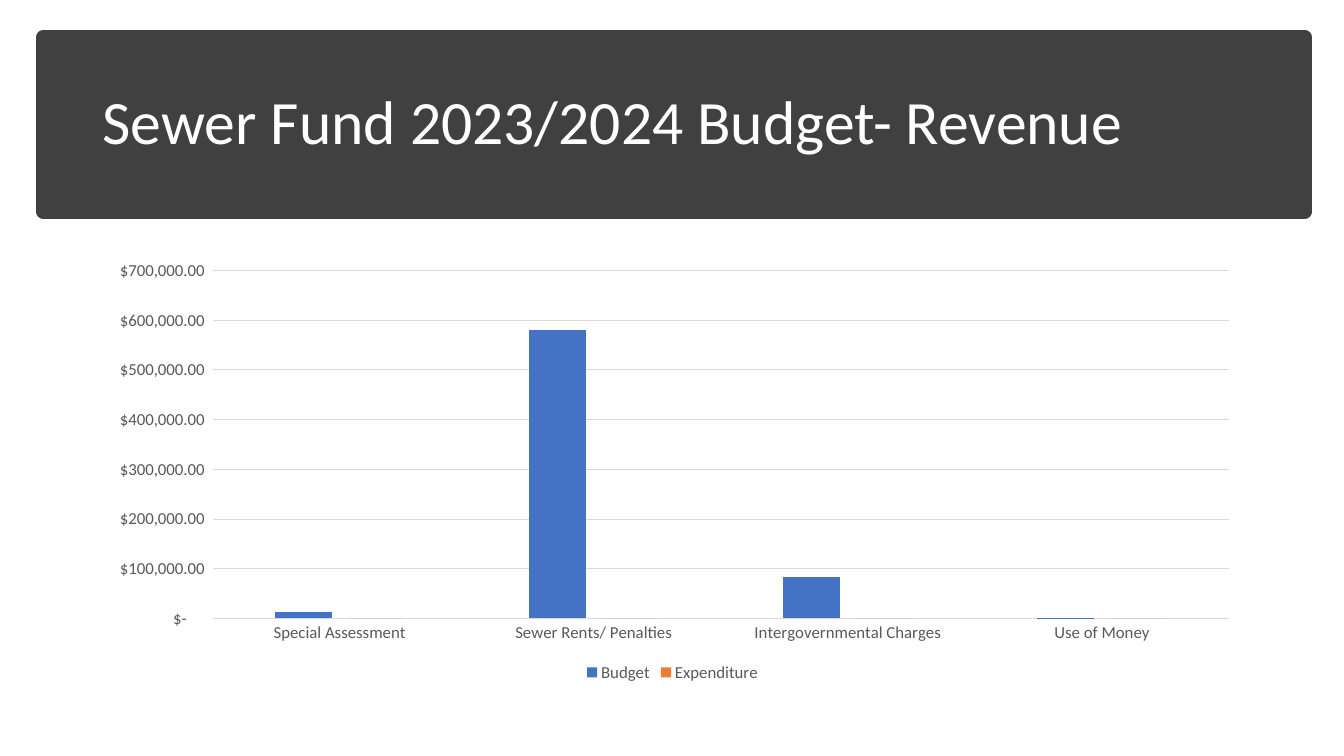
from dataclasses import dataclass

from pptx import Presentation
from pptx.chart.data import CategoryChartData
from pptx.dml.color import RGBColor
from pptx.enum.chart import XL_CHART_TYPE, XL_LEGEND_POSITION, XL_TICK_MARK
from pptx.enum.shapes import MSO_SHAPE
from pptx.enum.text import MSO_ANCHOR
from pptx.util import Pt

COLUMNS = XL_CHART_TYPE.COLUMN_CLUSTERED
LEGEND_BOTTOM = XL_LEGEND_POSITION.BOTTOM
NO_TICK = XL_TICK_MARK.NONE
RECTANGLE = MSO_SHAPE.RECTANGLE
MIDDLE = MSO_ANCHOR.MIDDLE

EMU_PER_PX = 9144  # 100 px to the inch
SLIDE_SIZE = (1333, 750)
BANNER_BOX = (43, 37, 1251, 173)
CHART_BOX = (92, 250, 1150, 431)

TITLE = "Sewer Fund 2023/2024 Budget- Revenue"
SOURCES = ("Special Assessment", "Sewer Rents/ Penalties",
           "Intergovernmental Charges", "Use of Money")
REVENUE = {
    "Budget": (12000, 580000, 84000, 500),
    "Expenditure": (0, 0, 0, 0),
}
DOLLARS = '_($* #,##0.00_);_($* (#,##0.00);_($* "-"??_);_(@_)'


@dataclass(frozen=True)
class Theme:
    font: str = "Calibri"
    banner: str = "404040"
    title: str = "FFFFFF"
    label: str = "595959"
    rule: str = "D9D9D9"
    series: tuple = ("4472C4", "ED7D31")
    title_size: int = 44
    label_size: int = 12


THEME = Theme()


def px(*lengths):
    return [length * EMU_PER_PX for length in lengths]


def rgb(code):
    return RGBColor.from_string(code)


def style_font(font, size, color):
    font.name = THEME.font
    font.size = Pt(size)
    font.color.rgb = rgb(color)


def add_text(slide, box, text, *, size, color, anchor=MIDDLE, spacing=0.9):
    frame = slide.shapes.add_textbox(*px(*box)).text_frame
    frame.word_wrap = True
    frame.vertical_anchor = anchor
    paragraph = frame.paragraphs[0]
    paragraph.line_spacing = spacing
    run = paragraph.add_run()
    run.text = text
    style_font(run.font, size, color)


def add_banner(slide, box):
    left, top, width, height = box
    band = slide.shapes.add_shape(RECTANGLE, *px(*box))
    band.shadow.inherit = False
    band.fill.solid()
    band.fill.fore_color.rgb = rgb(THEME.banner)
    band.line.color.rgb = rgb(THEME.banner)
    band.line.width = Pt(10)
    title_box = (left + 49, top + 14, width - 101, height - 28)
    add_text(slide, title_box, TITLE, size=THEME.title_size, color=THEME.title)


def style_axis(axis):
    axis.major_tick_mark = axis.minor_tick_mark = NO_TICK
    style_font(axis.tick_labels.font, THEME.label_size, THEME.label)


def style_rule(line):
    line.color.rgb = rgb(THEME.rule)
    line.width = Pt(0.75)


def add_revenue_chart(slide, box):
    revenue = CategoryChartData(number_format=DOLLARS)
    revenue.categories = SOURCES
    for name, amounts in REVENUE.items():
        revenue.add_series(name, amounts)
    chart = slide.shapes.add_chart(COLUMNS, *px(*box), revenue).chart
    chart.has_title = False
    style_font(chart.font, THEME.label_size, THEME.label)

    chart.has_legend = True
    chart.legend.position = LEGEND_BOTTOM
    chart.legend.include_in_layout = False
    style_font(chart.legend.font, THEME.label_size, THEME.label)

    style_axis(chart.category_axis)
    style_rule(chart.category_axis.format.line)
    amount_axis = chart.value_axis
    style_axis(amount_axis)
    amount_axis.format.line.fill.background()
    amount_axis.has_major_gridlines = True
    style_rule(amount_axis.major_gridlines.format.line)
    amount_axis.tick_labels.number_format = DOLLARS
    amount_axis.tick_labels.number_format_is_linked = False

    plot = chart.plots[0]
    plot.vary_by_categories = False
    plot.gap_width = 219
    plot.overlap = -27
    for series, color in zip(plot.series, THEME.series):
        series.invert_if_negative = False
        series.format.fill.solid()
        series.format.fill.fore_color.rgb = rgb(color)


def main():
    deck = Presentation()
    deck.slide_width, deck.slide_height = px(*SLIDE_SIZE)
    slide = deck.slides.add_slide(deck.slide_layouts[6])
    add_banner(slide, BANNER_BOX)
    add_revenue_chart(slide, CHART_BOX)
    deck.save("out.pptx")


if __name__ == "__main__":
    main()
